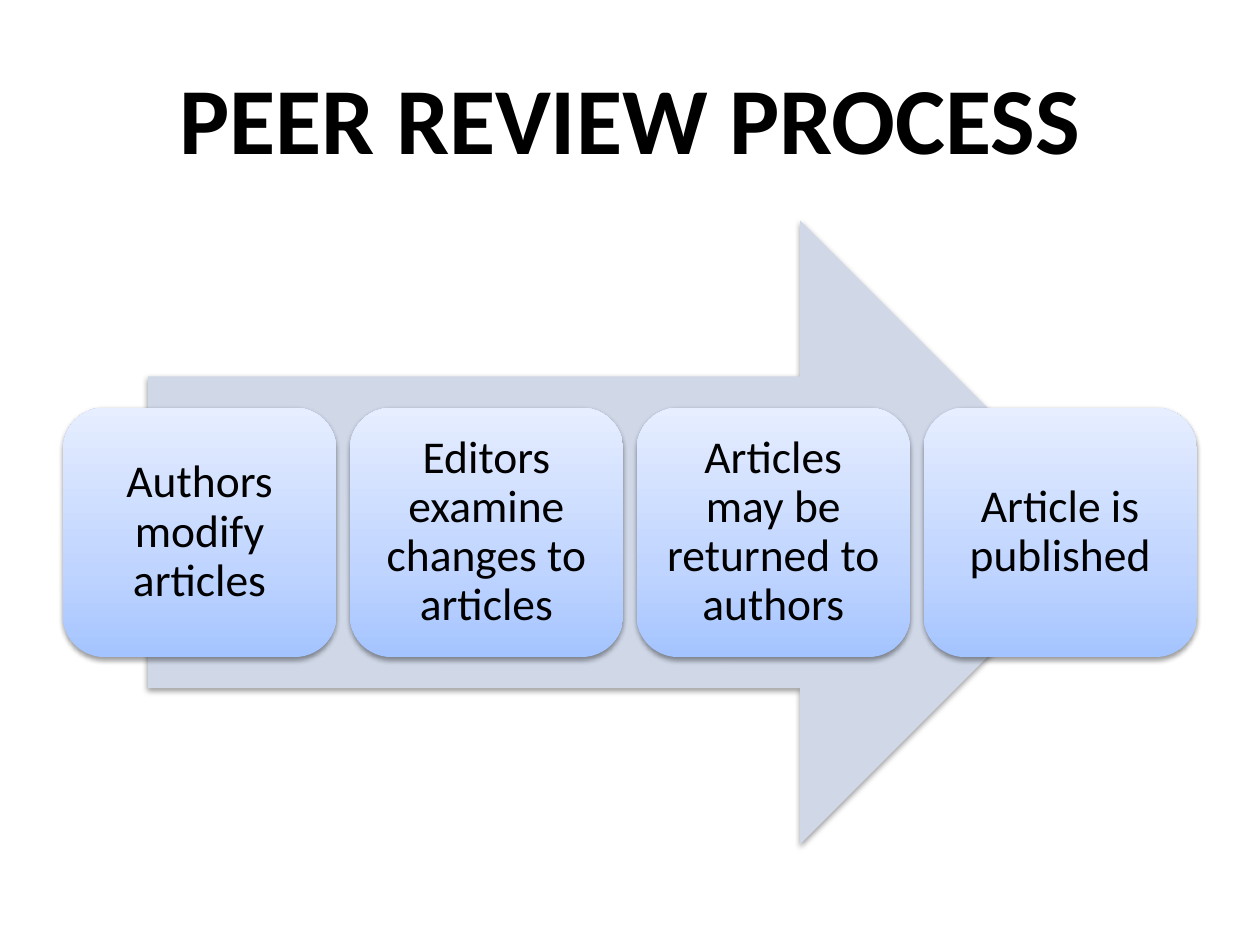
from copy import deepcopy
from lxml.etree import SubElement as Sub
from pptx import Presentation
from pptx.dml.color import RGBColor as RGB
from pptx.enum.shapes import MSO_SHAPE as Shape
from pptx.enum.text import MSO_ANCHOR as Anchor, PP_ALIGN as Align
from pptx.oxml.ns import qn
from pptx.util import Inches, Pt

BLACK = RGB(0x00, 0x00, 0x00)
PALE = RGB(0xD0, 0xD8, 0xE8)
BLEND = [(0, RGB(0xA4, 0xC4, 0xFF)), (0.35, RGB(0xBF, 0xD4, 0xFF)),
         (1, RGB(0xE6, 0xEE, 0xFF))]
FONT = "Calibri"
STEPS = ["Authors modify articles", "Editors examine changes to articles",
         "Articles may be returned to authors", "Article is published"]


def write(frame, text, size, bold=False):
    frame.word_wrap = True
    frame.vertical_anchor = Anchor.MIDDLE
    para = frame.paragraphs[0]
    para.alignment = Align.CENTER
    run = para.add_run()
    run.text = text
    font = run.font
    font.name, font.size, font.bold = FONT, Pt(size), bold
    font.color.rgb = BLACK
    return para


def shade(shape):
    shape.shadow.inherit = False
    glow = shape._element.spPr.find(qn("a:effectLst"))
    drop = Sub(glow, qn("a:outerShdw"), blurRad=str(Pt(3.1)),
               dist=str(Pt(1.6)), dir="5400000", rotWithShape="0")
    tint = Sub(drop, qn("a:srgbClr"), val=str(BLACK))
    Sub(tint, qn("a:alpha"), val="38000")


def blend(shape):
    fill = shape.fill
    fill.gradient()
    fill.gradient_angle = 90
    stop = shape._element.spPr.find(".//" + qn("a:gs"))
    stop.addnext(deepcopy(stop))
    for stop, (place, color) in zip(fill.gradient_stops, BLEND):
        stop.position = place
        stop.color.rgb = color


def add_form(slide, kind, left, top, width, height):
    shape = slide.shapes.add_shape(kind, left, top, width, height)
    shape.line.fill.background()
    shade(shape)
    return shape


def add_title(slide, left, top, width, height):
    title = slide.shapes.title
    title.left, title.top, title.width, title.height = left, top, width, height
    write(title.text_frame, "PEER REVIEW PROCESS", 54, True)


def add_step(slide, text, left, top, width, height):
    card = add_form(slide, Shape.ROUNDED_RECTANGLE, left, top, width, height)
    blend(card)
    frame = card.text_frame
    frame.margin_left = frame.margin_right = Inches(0.11)
    frame.margin_top = frame.margin_bottom = Inches(0.11)
    write(frame, text, 26).line_spacing = 0.9


def add_flow(slide, left, top, width, height):
    span = int(width * 0.85)
    arrow = add_form(slide, Shape.RIGHT_ARROW, left + (width - span) // 2,
                     top, span, height)
    arrow.fill.solid()
    arrow.fill.fore_color.rgb = PALE
    card, tall = Inches(2.17), int(height * 0.4)
    pitch = (width - card) // (len(STEPS) - 1)
    for i, text in enumerate(STEPS):
        add_step(slide, text, left + i * pitch, top + (height - tall) // 2,
                 card, tall)


def main():
    deck = Presentation()
    deck.slide_width, deck.slide_height = Inches(10), Inches(7.5)
    slide = deck.slides.add_slide(deck.slide_layouts[5])
    add_title(slide, Inches(0.5), Inches(0.3), Inches(9), Inches(1.25))
    add_flow(slide, Inches(0.5), Inches(1.75), Inches(9), Inches(4.95))
    deck.save("out.pptx")


if __name__ == "__main__":
    main()
